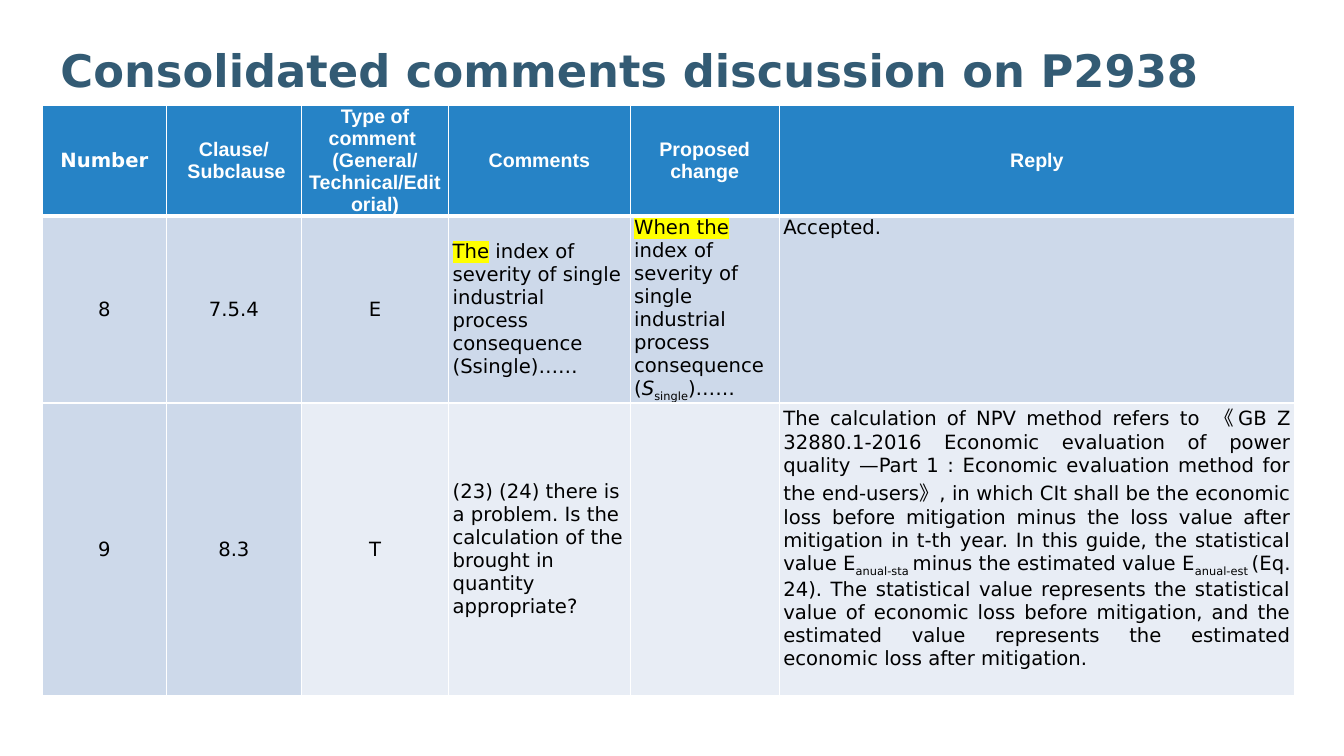
"""Build the slide with the table of consolidated comments on P2938."""
from lxml import etree
from pptx import Presentation
from pptx.dml.color import RGBColor
from pptx.enum.text import MSO_ANCHOR, PP_ALIGN
from pptx.oxml.ns import qn
from pptx.util import Inches, Pt

TOP, MID = MSO_ANCHOR.TOP, MSO_ANCHOR.MIDDLE
LEFT, MIDDLE, FULL = PP_ALIGN.LEFT, PP_ALIGN.CENTER, PP_ALIGN.JUSTIFY
SANS, ARIAL = "DejaVu Sans", "Arial"
HUES = {"title": "335B74", "head": "2683C6", "dark": "CDD9EA", "light": "E8EDF5",
        "white": "FFFFFF", "black": "000000", "mark": "FFFF00"}

TITLE = "Consolidated comments discussion on P2938"
HEADS = [
    ["Number"],
    ["Clause/", " Subclause"],
    ["Type of comment ", "(General/ Technical/Editorial)"],
    ["Comments"],
    ["Proposed change"],
    ["Reply"],
]
ROWS = [
    ["8", "7.5.4", "E",
     [("The", "mark"),
      (" index of severity of single industrial process consequence (Ssingle)……", "")],
     [("When the", "mark"),
      (" index of severity of single industrial process consequence (", ""),
      ("S", "slant"), ("single", "sub"), (")……", "")],
     "Accepted."],
    ["9", "8.3", "T",
     "(23) (24) there is a problem. Is the calculation of the brought in quantity appropriate?",
     "",
     [("The calculation of NPV method refers to 《GB Z 32880.1-2016 Economic evaluation of "
       "power quality —Part 1 : Economic evaluation method for the end-users》, in which CIt "
       "shall be the economic loss before mitigation minus the loss value after mitigation in "
       "t-th year. In this guide, the statistical value E", ""),
      ("anual-sta ", "sub"), ("minus the estimated value E", ""), ("anual-est ", "sub"),
      ("(Eq. 24). The statistical value represents the statistical value of economic loss "
       "before mitigation, and the estimated value represents the estimated economic loss "
       "after mitigation.", "")]],
]
FILLS = [["dark"] * 6, ["dark"] * 2 + ["light"] * 4]
WIDTHS = [1.23, 1.34, 1.46, 1.8, 1.48, 5.11]
HEIGHTS = [1.09, 1.84, 2.9]


def rgb(name):
    return RGBColor.from_string(HUES[name])


def write(frame, paras, size=14, font=SANS, hue="black", bold=False, align=LEFT, after=0):
    """Fill a frame; each paragraph is a string or a list of (text, style)."""
    frame.word_wrap = True
    for i, runs in enumerate(paras):
        para = frame.add_paragraph() if i else frame.paragraphs[0]
        para.alignment = align
        para.space_after = Pt(after)
        for text, style in [(runs, "")] if isinstance(runs, str) else runs:
            run = para.add_run()
            run.text = text
            run.font.size, run.font.bold = Pt(size), bold
            run.font.italic = style == "slant"
            run.font.color.rgb = rgb(hue)
            props = run._r.get_or_add_rPr()
            if style == "mark":
                light = etree.SubElement(props, qn("a:highlight"))
                etree.SubElement(light, qn("a:srgbClr"), val=HUES["mark"])
            if style == "sub":
                props.set("baseline", "-25000")
            run.font.name = font


def dress(cell, fill, anchor, side, edge=0, top=1, base=1):
    """Set the borders, fill, anchor and margins of a cell."""
    props = cell._tc.get_or_add_tcPr()
    for tag, width in (("L", 1), ("R", 1), ("T", top), ("B", base)):
        line = etree.SubElement(props, qn("a:ln" + tag), w=str(Pt(width)))
        paint = etree.SubElement(line, qn("a:solidFill"))
        etree.SubElement(paint, qn("a:srgbClr"), val=HUES["white"])
    cell.fill.solid()
    cell.fill.fore_color.rgb = rgb(fill)
    cell.vertical_anchor = anchor
    cell.margin_left = cell.margin_right = Inches(side)
    cell.margin_top = cell.margin_bottom = Inches(edge)


def main():
    deck = Presentation()
    deck.slide_width, deck.slide_height = Inches(13.33), Inches(7.5)
    slide = deck.slides.add_slide(deck.slide_layouts[5])

    title = slide.shapes.title
    title.left, title.top = Inches(0.5), Inches(0.37)
    title.width, title.height = Inches(12.04), Inches(1.25)
    title.text_frame.vertical_anchor = TOP
    write(title.text_frame, [TITLE], size=32, hue="title", bold=True)

    grid = slide.shapes.add_table(
        len(HEIGHTS), len(WIDTHS), Inches(0.42), Inches(1.05),
        Inches(sum(WIDTHS)), Inches(sum(HEIGHTS))).table
    grid.horz_banding = False
    for col, width in zip(grid.columns, WIDTHS):
        col.width = Inches(width)
    for row, height in zip(grid.rows, HEIGHTS):
        row.height = Inches(height)

    for c, paras in enumerate(HEADS):
        cell = grid.cell(0, c)
        dress(cell, "head", MID, 0.07, base=3)
        write(cell.text_frame, paras, font=ARIAL if c else SANS,
              hue="white", bold=True, align=MIDDLE)

    for r, (row, fills) in enumerate(zip(ROWS, FILLS), 1):
        for c, (text, fill) in enumerate(zip(row, fills)):
            cell = grid.cell(r, c)
            dress(cell, fill, TOP if c == 5 else MID, 0.07 if c < 2 else 0.04,
                  edge=0.05 if c == 2 else 0, top=3 if r == 1 else 1)
            align = MIDDLE if c < 3 else FULL if (r, c) == (2, 5) else LEFT
            if text:
                write(cell.text_frame, [text], align=align, after=12 if c < 2 else 0)

    deck.save("out.pptx")


if __name__ == "__main__":
    main()
